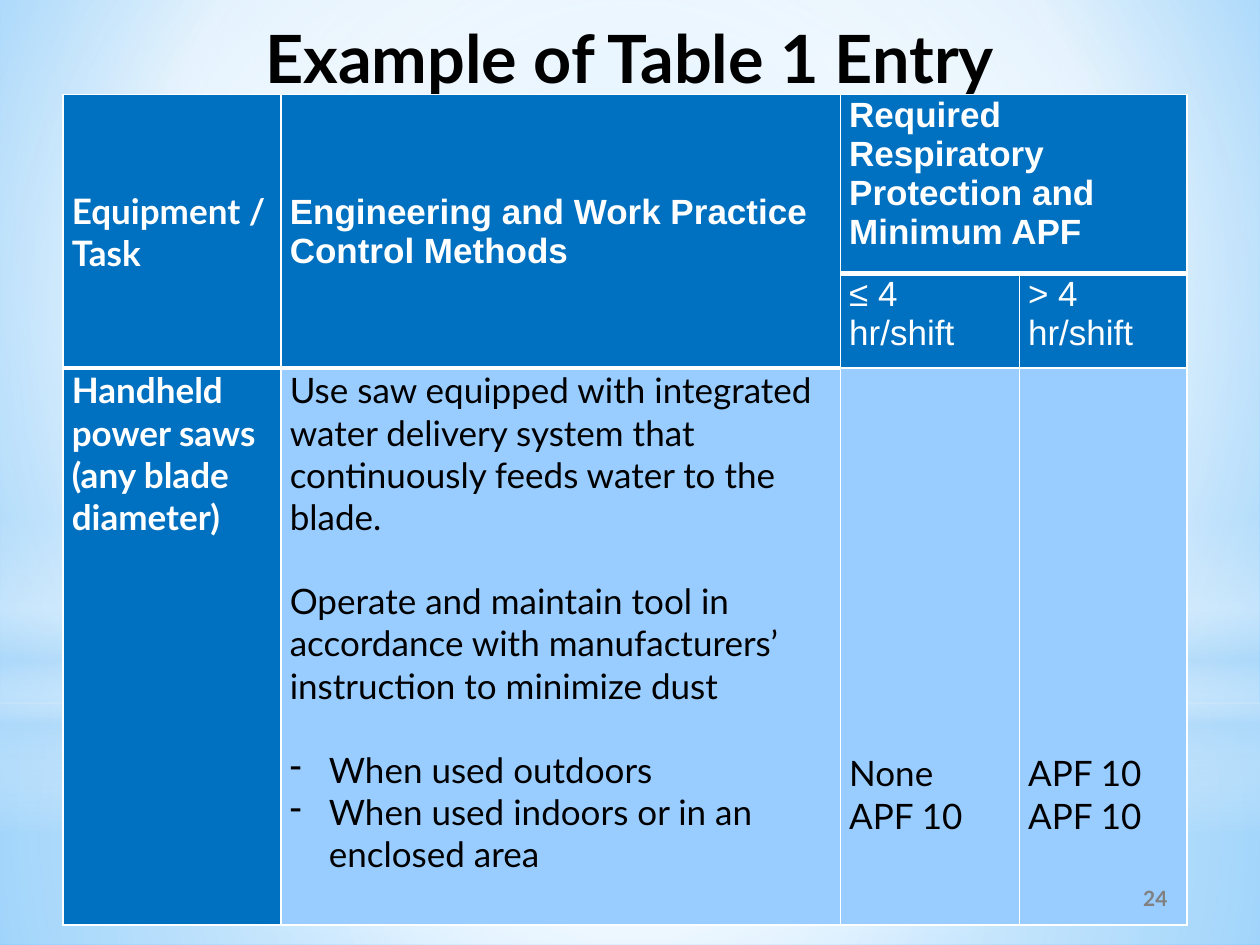
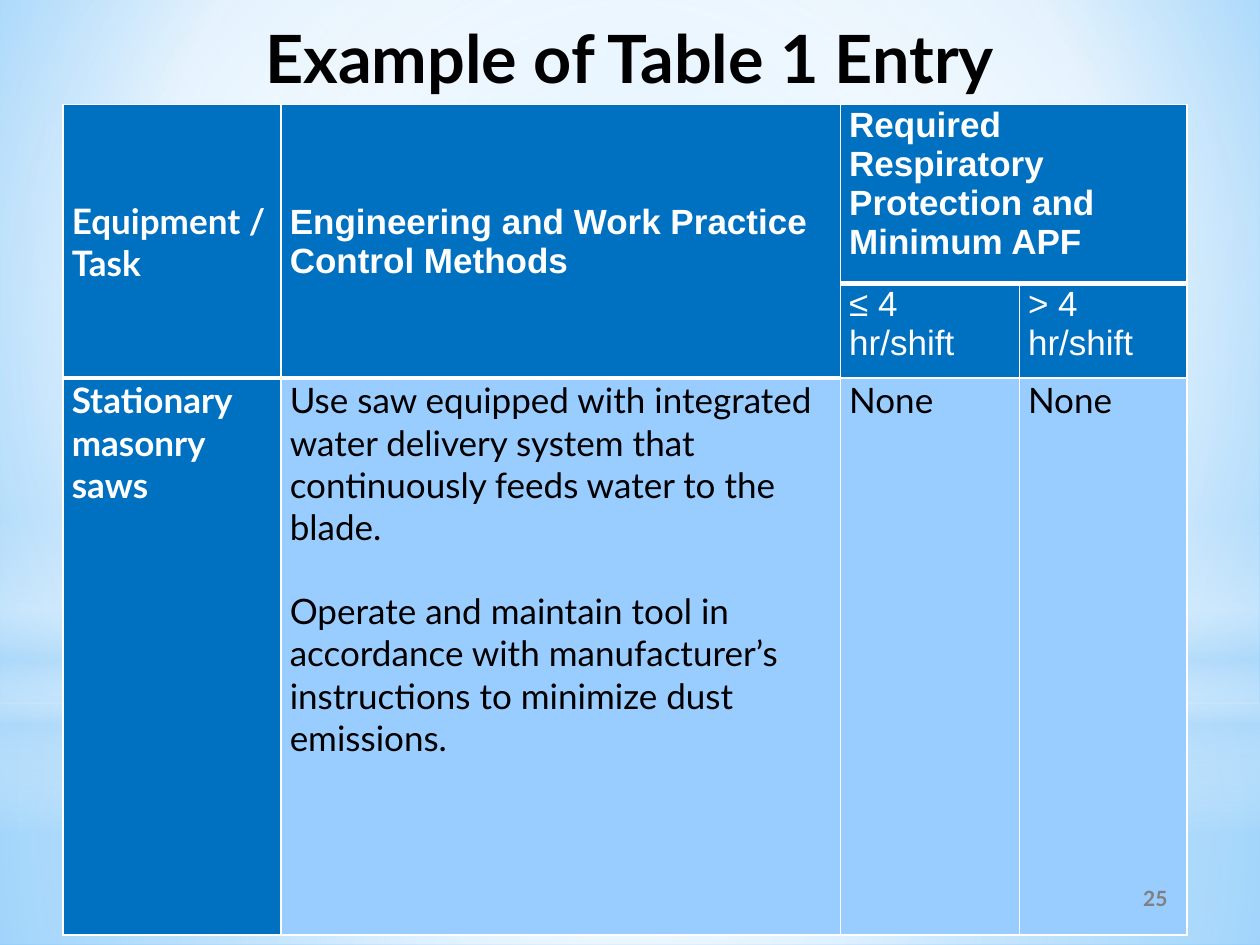
from pptx import Presentation
from pptx.dml.color import RGBColor
from pptx.enum.shapes import MSO_SHAPE
from pptx.enum.text import MSO_ANCHOR, PP_ALIGN
from pptx.oxml import parse_xml
from pptx.oxml.ns import nsdecls, qn
from pptx.util import Inches, Pt

RECTANGLE, ELLIPSE = MSO_SHAPE.RECTANGLE, MSO_SHAPE.OVAL
TOP, MIDDLE = MSO_ANCHOR.TOP, MSO_ANCHOR.MIDDLE
LEFT, CENTER = PP_ALIGN.LEFT, PP_ALIGN.CENTER

# Shared look
COLORS = {
    "white": "FFFFFF", "black": "000000", "gray": "808080",
    "header": "0070C0", "body": "99CCFF", "haze": "B4DCFA",
    "sky": "9ED5FF", "deep_sky": "5BB9FF",
}
BODY_FONT, HEAD_FONT = "Lato", "Arial"
LINE_GAP = 24  # one line of body text, in points
HANG = 0.31

# Gradient stops: position %, colour, opacity %
BACKGROUND = [(0, "sky", 100), (60, "white", 100), (100, "deep_sky", 100)]
CENTERED = (50, 50, 50, 50)
BACKDROP = [
    (RECTANGLE, (0, 5.58, 10, 1.92), CENTERED,
     [(0, "white", 91), (37, "white", 76), (100, "haze", 79)]),
    (RECTANGLE, (0, 0, 10, 5.58), CENTERED,
     [(0, "white", 89), (48, "white", 62), (100, "haze", 79)]),
    (RECTANGLE, (0, 4.12, 10, 2.5), None,
     [(0, "white", 0), (29, "white", 30), (45, "haze", 40),
      (55, "white", 26), (65, "haze", 60), (100, "white", 0)]),
    (ELLIPSE, (0, 1.75, 10, 5.58), CENTERED,
     [(0, "white", 100), (56, "white", 0)]),
]

# Content
TITLE = "Example of Table 1 Entry"
COLUMNS = [1.73, 4.44, 1.42, 1.33]
ROWS = [1.42, 0.75, 4.42]
MERGES = [((0, 0), (1, 0)), ((0, 1), (1, 1)), ((0, 2), (0, 3))]
THICK_TOPS = {(1, 2), (1, 3), (2, 0), (2, 1)}
HEADERS = [
    # row, column, lines, format, anchor
    (0, 0, ["Equipment / Task"], {"font": BODY_FONT, "bold": True}, MIDDLE),
    (0, 1, ["Engineering and Work Practice Control Methods"], {"bold": True}, MIDDLE),
    (0, 2, ["Required Respiratory Protection and", "Minimum APF"], {"bold": True}, TOP),
    (1, 2, ["≤ 4 hr/shift"], {}, TOP),
    (1, 3, ["> 4 hr/shift"], {}, TOP),
]
WATER = ("Use saw equipped with integrated water delivery system that "
         "continuously feeds water to the blade.")
ENTRIES = [
    {
        "number": "24", "number_width": 0.83, "table_top": 0.75,
        "task": ["Handheld power saws", "(any blade diameter)"],
        "methods": [
            WATER,
            ("Operate and maintain tool in accordance with manufacturers’ "
             "instruction to minimize dust", {"before": LINE_GAP}),
            ("When used outdoors", {"before": LINE_GAP, "bullet": "-"}),
            ("When used indoors or in an enclosed area", {"bullet": "-"}),
        ],
        "short_shift": ["None", "APF 10"],
        "long_shift": ["APF 10", "APF 10"],
        "rating_inset": 3.05,  # level with the two bulleted conditions
    },
    {
        "number": "25", "number_width": 2, "table_top": 0.83,
        "task": ["Stationary masonry saws"],
        "methods": [
            WATER,
            ("Operate and maintain tool in accordance with manufacturer’s "
             "instructions to minimize dust emissions.", {"before": LINE_GAP}),
        ],
        "short_shift": ["None"],
        "long_shift": ["None"],
        "rating_inset": 0.01,
    },
]


def write(frame, lines, font=BODY_FONT, size=20, color="black", bold=False, align=LEFT):
    """Fill a text frame; a line is a string or (string, paragraph options)."""
    frame.word_wrap = True
    for index, line in enumerate(lines):
        text, options = (line, {}) if isinstance(line, str) else line
        para = frame.paragraphs[0] if index == 0 else frame.add_paragraph()
        if "bullet" in options:
            properties = para._p.get_or_add_pPr()
            properties.set("marL", str(Inches(HANG)))
            properties.set("indent", str(-Inches(HANG)))
            properties.append(parse_xml(
                f'<a:buChar {nsdecls("a")} char="{options["bullet"]}"/>'))
        para.alignment = align
        para.space_before = Pt(options.get("before", 0))
        span = para.add_run()
        span.text = text
        span.font.name, span.font.size, span.font.bold = font, Pt(size), bold
        span.font.color.rgb = RGBColor.from_string(COLORS[color])


def set_gradient(holder, stops, focus):
    """Swap the solid fill of an element for a radial or vertical gradient."""
    stop_xml = "".join(
        f'<a:gs pos="{position * 1000}"><a:srgbClr val="{COLORS[color]}">'
        f'<a:alpha val="{opacity * 1000}"/></a:srgbClr></a:gs>'
        for position, color, opacity in stops)
    if focus:
        edges = " ".join(f'{side}="{value * 1000}"' for side, value in zip("ltrb", focus))
        direction = f'<a:path path="circle"><a:fillToRect {edges}/></a:path>'
    else:
        direction = '<a:lin ang="5400000" scaled="0"/>'
    gradient = parse_xml(f'<a:gradFill {nsdecls("a")} rotWithShape="1">'
                         f'<a:gsLst>{stop_xml}</a:gsLst>{direction}</a:gradFill>')
    holder.replace(holder.find(qn("a:solidFill")), gradient)


def add_backdrop(page):
    page.background.fill.solid()
    set_gradient(page.element.find(".//" + qn("p:bgPr")), BACKGROUND, (20, 10, 20, 60))
    for kind, place, focus, stops in BACKDROP:
        shape = page.shapes.add_shape(kind, *map(Inches, place))
        shape.shadow.inherit = False
        shape.line.fill.background()
        shape.fill.solid()
        set_gradient(shape._element.spPr, stops, focus)


def add_label(page, place, text, **style):
    box = page.shapes.add_textbox(*map(Inches, place))
    box.text_frame.vertical_anchor = MIDDLE
    write(box.text_frame, [text], bold=True, align=CENTER, **style)


def style_cell(cell, row, column):
    """Set white borders, then the fill and the insets."""
    thick_top = (row, column) in THICK_TOPS
    below = row + (cell.span_height if cell.is_merge_origin else 1)
    thick_bottom = (below, column) in THICK_TOPS
    widths = {"L": 1, "R": 1, "T": 3 if thick_top else 1, "B": 3 if thick_bottom else 1}
    properties = cell._tc.get_or_add_tcPr()
    for side, width in widths.items():
        properties.append(parse_xml(
            f'<a:ln{side} {nsdecls("a")} w="{Pt(width)}"><a:solidFill>'
            f'<a:srgbClr val="{COLORS["white"]}"/></a:solidFill></a:ln{side}>'))
    cell.fill.solid()
    fill = "header" if row < 2 or column == 0 else "body"
    cell.fill.fore_color.rgb = RGBColor.from_string(COLORS[fill])
    cell.margin_left = cell.margin_right = Inches(0.07)
    cell.margin_top, cell.margin_bottom = Inches(0.01), 0


def add_entry_table(page, entry):
    place = (0.5, entry["table_top"], sum(COLUMNS), sum(ROWS))
    table = page.shapes.add_table(len(ROWS), len(COLUMNS), *map(Inches, place)).table
    table.first_row = table.horz_banding = False
    for column, width in enumerate(COLUMNS):
        table.columns[column].width = Inches(width)
    for row, height in enumerate(ROWS):
        table.rows[row].height = Inches(height)
    for first, last in MERGES:
        table.cell(*first).merge(table.cell(*last))
    for row in range(len(ROWS)):
        for column in range(len(COLUMNS)):
            style_cell(table.cell(row, column), row, column)

    # Header rows
    for row, column, lines, style, anchor in HEADERS:
        cell = table.cell(row, column)
        cell.vertical_anchor = anchor
        write(cell.text_frame, lines, **{"font": HEAD_FONT, "color": "white", **style})

    # Entry row
    write(table.cell(2, 0).text_frame, entry["task"], color="white", bold=True)
    write(table.cell(2, 1).text_frame, entry["methods"])
    for column, rating in ((2, "short_shift"), (3, "long_shift")):
        cell = table.cell(2, column)
        cell.margin_top = Inches(entry["rating_inset"])
        write(cell.text_frame, entry[rating])


def main():
    deck = Presentation()
    deck.slide_width, deck.slide_height = Inches(10), Inches(7.5)
    for entry in ENTRIES:
        page = deck.slides.add_slide(deck.slide_layouts[6])
        add_backdrop(page)
        add_label(page, (0.5, 0.08, 9, 0.75), TITLE, size=38)
        add_entry_table(page, entry)
        width = entry["number_width"]
        add_label(page, (9.17 - width / 2, 6.93, width, 0.4), entry["number"],
                  size=12, color="gray")
    deck.save("out.pptx")


if __name__ == "__main__":
    main()
